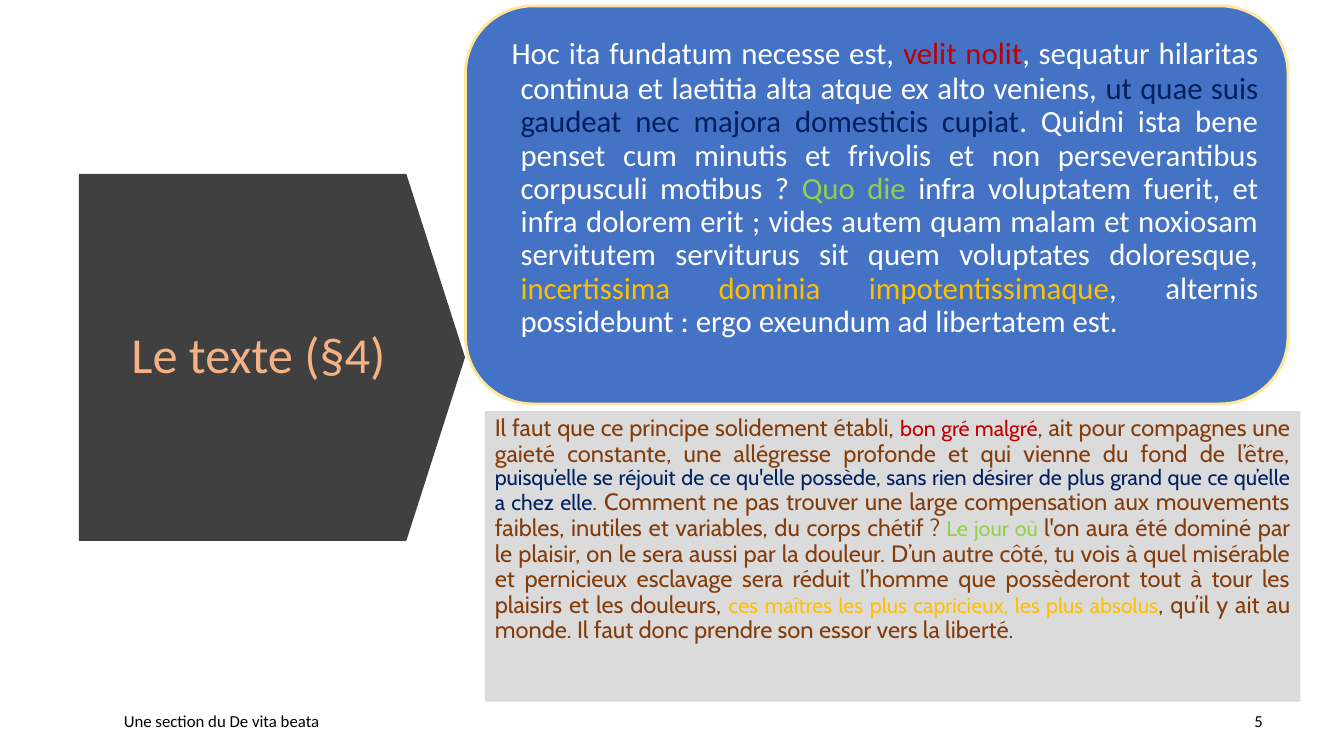
from pptx import Presentation
from pptx import util as u
from pptx.dml.color import RGBColor
from pptx.enum import shapes, text

WHITE = RGBColor(0xFF, 0xFF, 0xFF)
BLACK = RGBColor(0x00, 0x00, 0x00)
CHARCOAL = RGBColor(0x40, 0x40, 0x40)
SILVER = RGBColor(0xDB, 0xDB, 0xDB)
BLUE = RGBColor(0x44, 0x72, 0xC4)
CREAM = RGBColor(0xFF, 0xE6, 0x99)
PEACH = RGBColor(0xF4, 0xB1, 0x83)
BROWN = RGBColor(0x84, 0x3C, 0x0B)
RED = RGBColor(0xC0, 0x00, 0x00)
NAVY = RGBColor(0x00, 0x20, 0x60)
GREEN = RGBColor(0x92, 0xD0, 0x50)
GOLD = RGBColor(0xFF, 0xC0, 0x00)

# Passages as (wording, colour, size); None keeps the paragraph's value
LATIN = [
    ("\N{NO-BREAK SPACE}", None, 28),
    ("\N{NO-BREAK SPACE}", None, 24),
    ("Hoc ita fundatum necesse est, ", None, None),
    ("velit nolit", RED, None),
    (", sequatur hilaritas continua et laetitia alta atque ex alto veniens, ", None, None),
    ("ut quae suis gaudeat nec majora domesticis cupiat", NAVY, None),
    (". Quidni ista bene penset cum minutis et frivolis et non perseverantibus "
     "corpusculi motibus ? ", None, None),
    ("Quo die", GREEN, None),
    (" infra voluptatem fuerit, et infra dolorem erit ; vides autem quam malam et noxiosam "
     "servitutem serviturus sit quem voluptates doloresque, ", None, None),
    ("incertissima dominia impotentissimaque", GOLD, None),
    (", alternis possidebunt : ergo exeundum ad libertatem est.", None, None),
]
KEY_SIZE = 15.4
FRENCH = [
    ("Il faut que ce principe solidement établi, ", None, None),
    ("bon gré malgré", RED, KEY_SIZE),
    (", ait pour compagnes une gaieté constante, une allégresse profonde et qui vienne "
     "du fond de l’être, ", None, None),
    ("puisqu’elle se réjouit de ce qu'elle possède, sans rien désirer de plus grand "
     "que ce qu’elle a chez elle", NAVY, KEY_SIZE),
    (". Comment ne pas trouver une large compensation aux mouvements faibles, inutiles "
     "et variables, du corps chétif\N{NO-BREAK SPACE}?", None, None),
    (" Le jour où ", GREEN, KEY_SIZE),
    ("l'on aura été dominé par le plaisir, on le sera aussi par la douleur.\N{NO-BREAK SPACE}"
     "D’un autre côté, tu vois à quel misérable et pernicieux esclavage sera réduit l’homme "
     "que possèderont tout à tour les plaisirs et les douleurs, ", None, None),
    ("ces maîtres les plus capricieux, les plus absolus", GOLD, KEY_SIZE),
    (", qu’il y ait au monde. Il faut donc prendre son essor vers la liberté.", None, None),
]


class TextSlide:
    """Holds the current slide and its shared style."""
    font = "Calibri"

    def __init__(self, prs):
        self.slide = prs.slides.add_slide(prs.slide_layouts[5])

    def fill_text(self, shape, passages, size, color, align, anchor, font=None):
        frame = shape.text_frame
        frame.word_wrap = True
        frame.auto_size = text.MSO_AUTO_SIZE.NONE
        frame.vertical_anchor = anchor
        paragraph = frame.paragraphs[0]
        paragraph.alignment = align
        paragraph.font.name = font or self.font
        paragraph.font.size = u.Pt(size)
        paragraph.font.color.rgb = color
        for wording, run_color, run_size in passages:
            run = paragraph.add_run()
            run.text = wording
            # Shape text is white by theme, so each run states its colour
            run.font.color.rgb = run_color or color
            if run_size:
                run.font.size = u.Pt(run_size)
        return paragraph

    def panel(self, kind, box, fill, line=None, adjust=None):
        shape = self.slide.shapes.add_shape(kind, *map(u.Cm, box))
        shape.shadow.inherit = False
        shape.fill.solid()
        shape.fill.fore_color.rgb = fill
        if line:
            shape.line.color.rgb = line
            shape.line.width = u.Pt(2)
        else:
            shape.line.fill.background()
        if adjust is not None:
            shape.adjustments[0] = adjust
        return shape

    def passage(self, panel, passages, size, color, font=None):
        paragraph = self.fill_text(panel, passages, size, color, text.PP_ALIGN.JUSTIFY,
                                   text.MSO_ANCHOR.TOP, font)
        paragraph.line_spacing = 0.9
        paragraph.space_before = u.Pt(10)
        return paragraph

    def title(self, wording, box):
        title = self.slide.shapes.title
        title.left, title.top, title.width, title.height = map(u.Cm, box)
        paragraph = self.fill_text(title, [(wording, None, None)], 36, PEACH,
                                   text.PP_ALIGN.CENTER, text.MSO_ANCHOR.MIDDLE)
        paragraph.line_spacing = 0.9
        # Bring the title in front of the arrow
        self.slide.shapes._spTree.append(title._element)

    def footer(self, wording, box, align):
        footer = self.slide.shapes.add_textbox(*map(u.Cm, box))
        paragraph = self.fill_text(footer, [(wording, None, None)], 12, BLACK, align,
                                   text.MSO_ANCHOR.MIDDLE)
        paragraph.space_after = u.Pt(6)


def main():
    prs = Presentation()
    prs.slide_width, prs.slide_height = u.Cm(33.87), u.Cm(19.05)
    page = TextSlide(prs)

    # Arrow with the title
    page.panel(shapes.MSO_SHAPE.PENTAGON, (1.99, 4.38, 9.73, 9.25), CHARCOAL, adjust=0.16)
    page.title("Le texte (§4)", (2.87, 5.46, 7.29, 7.06))

    # Latin passage, with a hanging first line
    latin = page.panel(shapes.MSO_SHAPE.ROUNDED_RECTANGLE, (11.73, 0.15, 20.73, 10.03),
                       BLUE, CREAM, 0.17)
    latin_props = page.passage(latin, LATIN, 22, WHITE)._p.get_or_add_pPr()
    latin_props.set("marL", str(u.Cm(0.64)))
    latin_props.set("indent", str(-u.Cm(0.64)))

    # French translation
    french = page.panel(shapes.MSO_SHAPE.RECTANGLE, (12.22, 10.36, 20.55, 7.32), SILVER)
    page.passage(french, FRENCH, 16.9, BROWN, "Cabin")

    # Footer and page number
    page.footer("Une section du De vita beata", (2.87, 17.65, 17.25, 1.02), text.PP_ALIGN.LEFT)
    page.footer("5", (30.66, 17.65, 1.42, 1.02), text.PP_ALIGN.RIGHT)

    prs.save("out.pptx")


if __name__ == "__main__":
    main()
